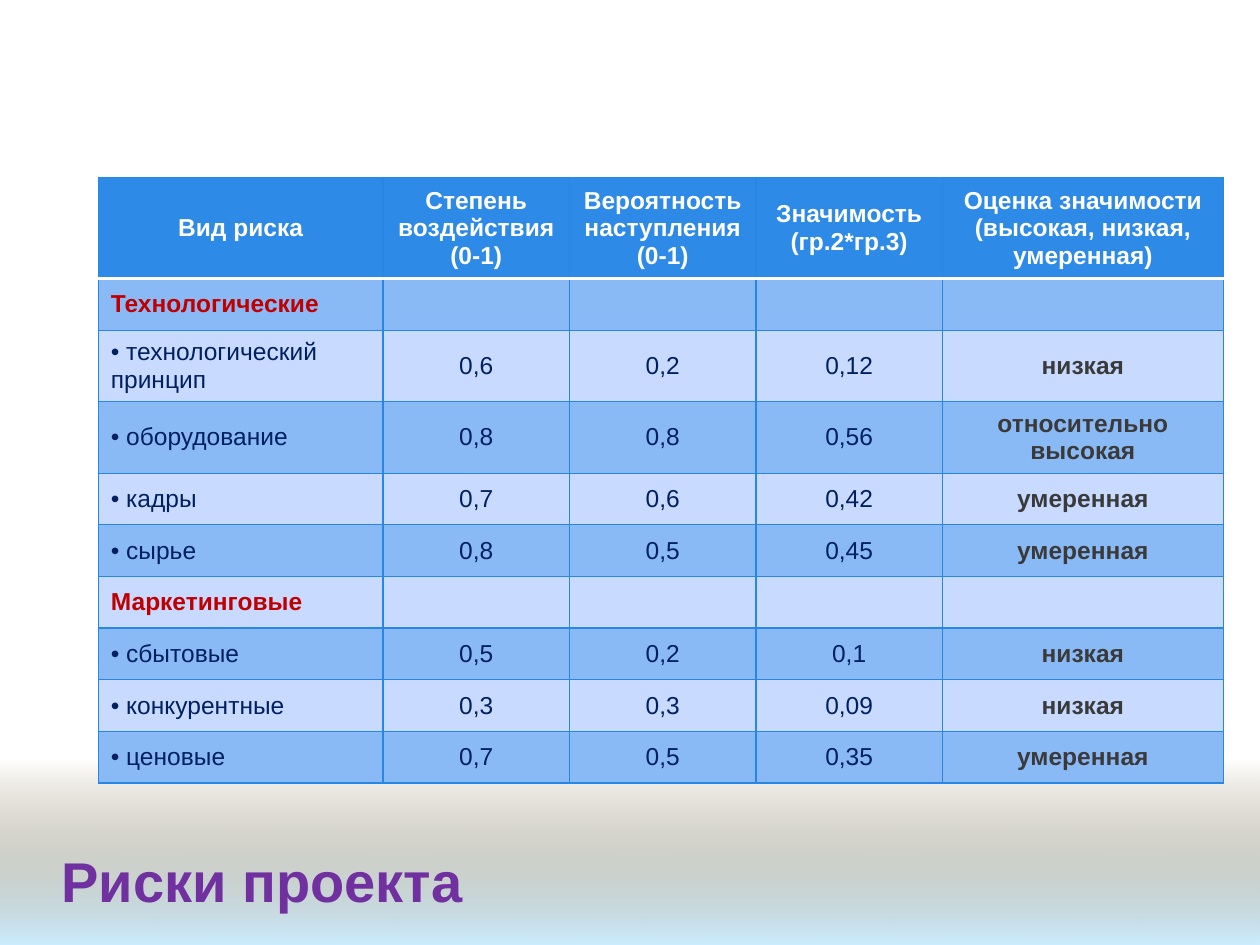
from lxml import etree
from pptx import Presentation
from pptx import util as u
from pptx.dml.color import RGBColor
from pptx.enum import shapes, text
from pptx.oxml.ns import qn


def rgb(value):
    return RGBColor.from_string(value)


def add_run(p, value, size, color, bold):
    r = p.add_run()
    r.text = value
    r.font.name = "Arial"
    r.font.size = u.Pt(size)
    r.font.bold = bold
    r.font.color.rgb = rgb(color)


prs = Presentation()
prs.slide_width, prs.slide_height = u.Inches(10), u.Inches(7.5)
W, H = prs.slide_width, prs.slide_height
s = prs.slides.add_slide(prs.slide_layouts[6])

sp = s.shapes.add_shape(shapes.MSO_SHAPE.RECTANGLE, 0, int(H * 0.804), W, int(H * 0.196))
sp.shadow.inherit = False
sp.line.fill.background()
sp.fill.gradient()
sp.fill.gradient_angle = 270
for stop, (position, color) in zip(sp.fill.gradient_stops, [(0, "765E2F"), (1, "CCECFF")]):
    stop.position = position
    stop.color.rgb = rgb(color)
clear = sp._element.spPr.find(".//" + qn("a:srgbClr"))
etree.SubElement(clear, qn("a:alpha"), val="0")

tb = s.shapes.add_textbox(int(W * 0.039), int(H * 0.885), int(W * 0.688), int(H * 0.093))
tf = tb.text_frame
tf.word_wrap = True
tf.vertical_anchor = text.MSO_ANCHOR.MIDDLE
add_run(tf.paragraphs[0], "Риски проекта", 32, "7030A0", True)

rows = [
    ["Вид риска", "Степень воздействия \n(0-1)", "Вероятность наступления (0-1)",
     "Значимость (гр.2*гр.3)", "Оценка значимости (высокая, низкая, умеренная)"],
    ["Технологические"],
    ["технологический принцип", "0,6", "0,2", "0,12", "низкая"],
    ["оборудование", "0,8", "0,8", "0,56", "относительно высокая"],
    ["кадры", "0,7", "0,6", "0,42", "умеренная"],
    ["сырье", "0,8", "0,5", "0,45", "умеренная"],
    ["Маркетинговые"],
    ["сбытовые", "0,5", "0,2", "0,1", "низкая"],
    ["конкурентные", "0,3", "0,3", "0,09", "низкая"],
    ["ценовые", "0,7", "0,5", "0,35", "умеренная"],
]
shares = [0.226, 0.148, 0.148, 0.148, 0.223]
row_height = u.Inches(0.41)
table = s.shapes.add_table(len(rows), len(shares), int(W * 0.078), int(H * 0.188),
                           int(W * sum(shares)), row_height * len(rows)).table
for column, share in zip(table.columns, shares):
    column.width = int(W * share)

for i, values in enumerate(rows):
    table.rows[i].height = row_height
    for j in range(len(shares)):
        cell = table.cell(i, j)
        cell.vertical_anchor = text.MSO_ANCHOR.MIDDLE
        for side in ("L", "R", "T", "B"):
            divider = (i, side) in [(0, "B"), (1, "T")]
            ln = etree.SubElement(cell._tc.get_or_add_tcPr(), qn("a:ln" + side),
                                  w=str(u.Pt(2 if divider else 0.75)))
            solid = etree.SubElement(ln, qn("a:solidFill"))
            etree.SubElement(solid, qn("a:srgbClr"), val="FFFFFF" if divider else "2787E6")
        cell.fill.solid()
        cell.fill.fore_color.rgb = rgb("2D8AE7" if i == 0 else "8ABAF5" if i % 2 else "C8DAFF")
        if j >= len(values):
            continue

        if i == 0:
            color, bold = "FFFFFF", True
        elif len(values) == 1:
            color, bold = "C00000", True
        elif j == len(shares) - 1:
            color, bold = "3A3A3A", True
        else:
            color, bold = "002060", False
        bulleted = j == 0 and len(values) > 1 and i > 0
        tf = cell.text_frame
        for n, line in enumerate(values[j].split("\n")):
            p = tf.add_paragraph() if n else tf.paragraphs[0]
            if i == 0 or j > 0:
                p.alignment = text.PP_ALIGN.CENTER
            if bulleted:
                pPr = p._p.get_or_add_pPr()
                pPr.set("marL", "0")
                pPr.set("indent", "0")
                etree.SubElement(pPr, qn("a:buFont"), typeface="Arial")
                etree.SubElement(pPr, qn("a:buChar"), char="•")
            add_run(p, " " + line if bulleted else line, 14, color, bold)

prs.save("out.pptx")
